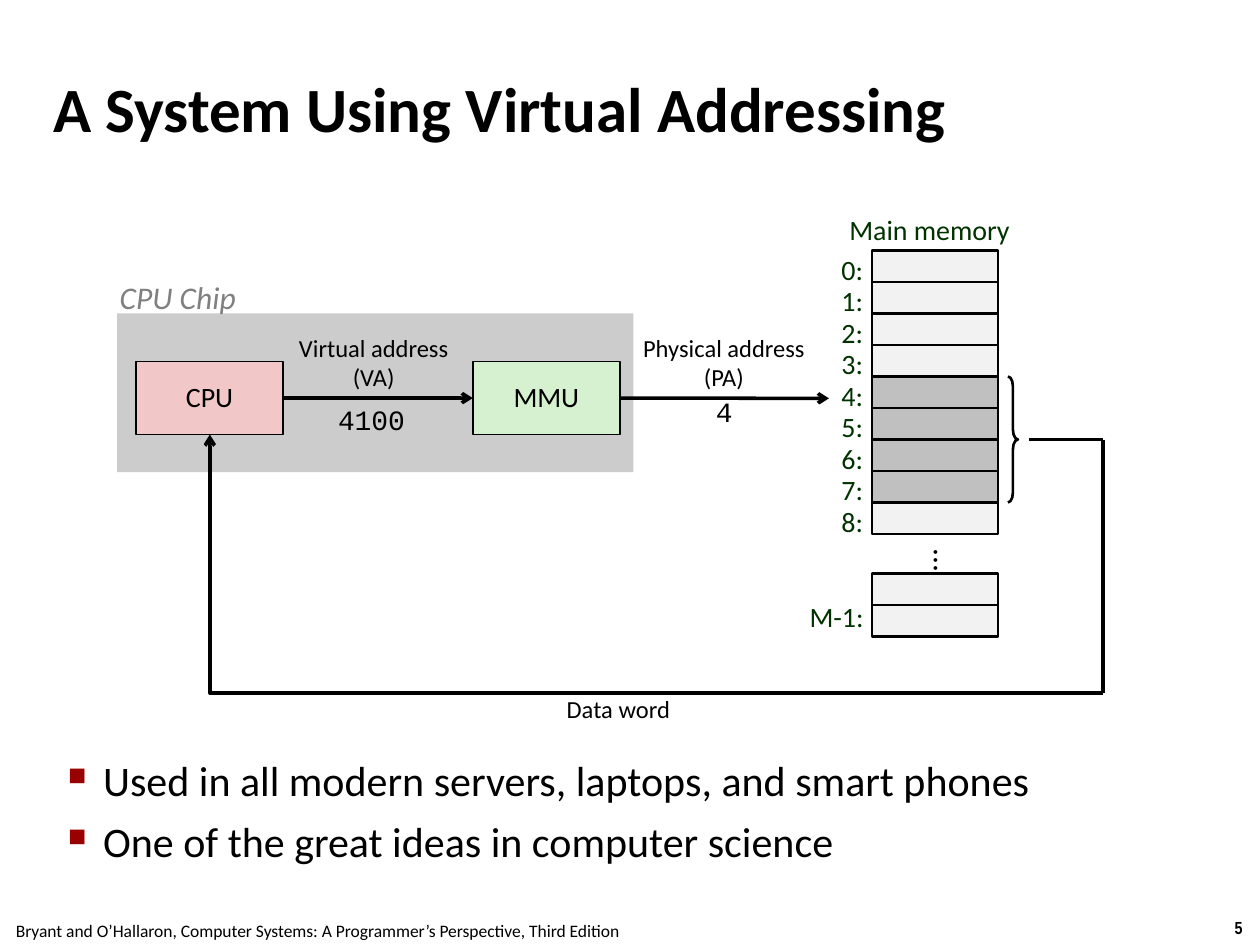
from dataclasses import dataclass

from lxml import etree
from pptx import Presentation
from pptx.dml.color import RGBColor
from pptx.enum.shapes import MSO_CONNECTOR, MSO_SHAPE
from pptx.enum.text import MSO_ANCHOR, PP_ALIGN
from pptx.oxml.ns import qn
from pptx.util import Cm, Pt

STRAIGHT, ELBOW = MSO_CONNECTOR.STRAIGHT, MSO_CONNECTOR.ELBOW
RECT, BRACE = MSO_SHAPE.RECTANGLE, MSO_SHAPE.RIGHT_BRACE
LEFT, CENTER = PP_ALIGN.LEFT, PP_ALIGN.CENTER
TOP, MIDDLE = MSO_ANCHOR.TOP, MSO_ANCHOR.MIDDLE
SIDE_LEFT, SIDE_RIGHT = 1, 3


@dataclass(frozen=True)
class Theme:
    black: str = "000000"
    label: str = "003300"
    chip: str = "CCCCCC"
    chip_label: str = "808080"
    cpu: str = "F1C7C7"
    mmu: str = "D5F1CF"
    cell: str = "F2F2F2"
    used_cell: str = "C0C0C0"
    bullet: str = "990000"
    font: str = "Calibri"
    mono: str = "Courier New"
    narrow: str = "Arial Narrow"
    title: int = 36
    body: int = 24
    heading: int = 18
    normal: int = 16
    caption: int = 14
    footer: int = 10


T = Theme()
CELL_W = 2.54
CELL_H = CELL_W / 4
MEM_X, MEM_Y, MEM_END_Y = 17.58, 5.05, 11.56
CELL_COUNT = 9
DATA_WORD = range(4, 8)
BUS_Y = 8.03
RETURN_X, RETURN_Y = 22.23, 13.97


def write(shape, text, *, size=T.normal, color=T.black, font=T.font, bold=False,
          italic=False, align=CENTER, anchor=TOP, wrap=False, spacing=None,
          before=None, inset=None):
    tf = shape.text_frame
    tf.word_wrap = wrap
    tf.vertical_anchor = anchor
    if inset is not None:
        tf.margin_left = tf.margin_right = tf.margin_top = tf.margin_bottom = Cm(inset)
    for i, line in enumerate(text.split("\n")):
        p = tf.add_paragraph() if i else tf.paragraphs[0]
        p.alignment = align
        if spacing is not None:
            p.line_spacing = spacing
        if before is not None:
            p.space_before = Pt(before)
        r = p.add_run()
        r.text = line
        r.font.name, r.font.size = font, Pt(size)
        r.font.bold, r.font.italic = bold, italic
        r.font.color.rgb = RGBColor.from_string(color)
    return tf


def add_text(s, x, y, w, h, text, **fmt):
    tb = s.shapes.add_textbox(Cm(x), Cm(y), Cm(w), Cm(h))
    return write(tb, text, **fmt)


def add_memory_label(s, x, y, w, text):
    add_text(s, x, y, w, 0.84, text, color=T.label, spacing=0.88, before=6)


def add_preset(s, kind, x, y, w, h, fill=None, line=None):
    sp = s.shapes.add_shape(kind, Cm(x), Cm(y), Cm(w), Cm(h))
    sp.shadow.inherit = False
    if fill:
        sp.fill.solid()
        sp.fill.fore_color.rgb = RGBColor.from_string(fill)
    else:
        sp.fill.background()
    if line:
        sp.line.color.rgb = RGBColor.from_string(T.black)
        sp.line.width = Pt(line)
    else:
        sp.line.fill.background()
    return sp


def add_unit(s, x, text, fill):
    """Add a named block on the chip."""
    sp = add_preset(s, RECT, x, 7.29, 2.97, 1.47, fill, 1)
    write(sp, text, anchor=MIDDLE, spacing=0.98)
    return sp


def add_line(s, x1, y1, x2, y2, kind=STRAIGHT, arrow=False):
    c = s.shapes.add_connector(kind, Cm(x1), Cm(y1), Cm(x2), Cm(y2))
    c.line.color.rgb = RGBColor.from_string(T.black)
    c.line.width = Pt(2)
    if arrow:
        etree.SubElement(c.line._get_or_add_ln(), qn("a:tailEnd"), type="arrow")
    etree.SubElement(c._element.spPr, qn("a:effectLst"))
    return c


def add_return_arrow(s):
    """Run left along the bottom, then up into the CPU."""
    c = add_line(s, 4.23, 8.76, RETURN_X, RETURN_Y, ELBOW, arrow=True)
    spPr = c._element.spPr
    spPr.find(qn("a:prstGeom")).set("prst", "bentConnector2")
    spPr.find(qn("a:xfrm")).set("rot", str(180 * 60000))


def add_bullets(tf):
    for p in tf.paragraphs:
        pPr = p._p.get_or_add_pPr()
        pPr.set("marL", str(Cm(0.71)))
        pPr.set("indent", str(-Cm(0.71)))
        color = etree.SubElement(pPr, qn("a:buClr"))
        etree.SubElement(color, qn("a:srgbClr"), val=T.bullet)
        etree.SubElement(pPr, qn("a:buSzPct"), val="60000")
        etree.SubElement(pPr, qn("a:buChar"), char="■")


def add_memory(s):
    add_memory_label(s, 16.81, 4.24, 3.86, "Main memory")
    for i in range(CELL_COUNT):
        y = MEM_Y + i * CELL_H
        fill = T.used_cell if i in DATA_WORD else T.cell
        add_preset(s, RECT, MEM_X, y, CELL_W, CELL_H, fill, 1.5)
        add_memory_label(s, 16.71, y, 0.94, f"{i}:")
    for i in range(2):
        add_preset(s, RECT, MEM_X, MEM_END_Y + i * CELL_H, CELL_W, CELL_H, T.cell, 1.5)
    add_memory_label(s, 16.05, 12.04, 1.63, "M-1:")

    dots = add_text(s, 17.78, 10.8, CELL_W, CELL_H, "...", size=T.heading,
                    anchor=MIDDLE, spacing=0.98)
    dots._txBody.find(qn("a:bodyPr")).set("vert", "eaVert")
    dots.paragraphs[0]._p.get_or_add_pPr().set("rtl", "1")

    brace = add_preset(s, BRACE, 20.32, MEM_Y + DATA_WORD.start * CELL_H,
                       0.2, len(DATA_WORD) * CELL_H, line=1.5)
    brace.adjustments[0] = 1


def add_buses(s, cpu, mmu):
    virtual = add_line(s, 5.71, BUS_Y, 9.53, BUS_Y, arrow=True)
    virtual.begin_connect(cpu, SIDE_RIGHT)
    virtual.end_connect(mmu, SIDE_LEFT)
    physical = add_line(s, 12.5, BUS_Y, 16.71, BUS_Y, arrow=True)
    physical.begin_connect(mmu, SIDE_RIGHT)
    word_y = MEM_Y + 6 * CELL_H
    add_line(s, 20.75, word_y, RETURN_X, word_y)
    add_line(s, RETURN_X, word_y, RETURN_X, RETURN_Y)
    add_return_arrow(s)

    for x, y, w, h, text in (
        (5.72, 6.6, 3.63, 1.45, "Virtual address\n(VA)"),
        (12.65, 6.6, 3.89, 1.45, "Physical address\n(PA)"),
        (11.13, 13.89, 2.67, 0.84, "Data word"),
    ):
        add_text(s, x, y, w, h, text, size=T.caption, anchor=MIDDLE, spacing=0.98)
    add_text(s, 6.55, 8, 1.88, 0.94, "4100", font=T.mono)
    add_text(s, 14.17, 7.82, 0.86, 0.94, "4", font=T.mono)


def main():
    prs = Presentation()
    prs.slide_width, prs.slide_height = Cm(25.4), Cm(19.05)
    s = prs.slides.add_slide(prs.slide_layouts[6])

    add_text(s, 0.97, 1.07, 24.21, 2.18, "A System Using Virtual Addressing",
             size=T.title, bold=True, align=LEFT, anchor=MIDDLE, wrap=True, inset=0.1)
    add_preset(s, RECT, 2.36, 6.32, 10.41, 3.2, T.chip)
    add_text(s, 2.11, 5.49, 2.95, 1.02, "CPU Chip", size=T.heading,
             color=T.chip_label, italic=True)
    cpu = add_unit(s, 2.74, "CPU", T.cpu)
    mmu = add_unit(s, 9.53, "MMU", T.mmu)
    add_memory(s)
    add_buses(s, cpu, mmu)

    body = add_text(s, 1.27, 15.11, 23.09, 3.51,
                    "Used in all modern servers, laptops, and smart phones\n"
                    "One of the great ideas in computer science",
                    size=T.body, align=LEFT, wrap=True, before=6, inset=0.1)
    add_bullets(body)
    add_text(s, -0.05, 18.42, 12.9, 0.69,
             "Bryant and O’Hallaron, Computer Systems: A Programmer’s Perspective, Third Edition",
             size=T.footer)
    add_text(s, 24.54, 18.36, 0.86, 0.69, "5", size=T.footer, font=T.narrow, bold=True)
    prs.save("out.pptx")


if __name__ == "__main__":
    main()
